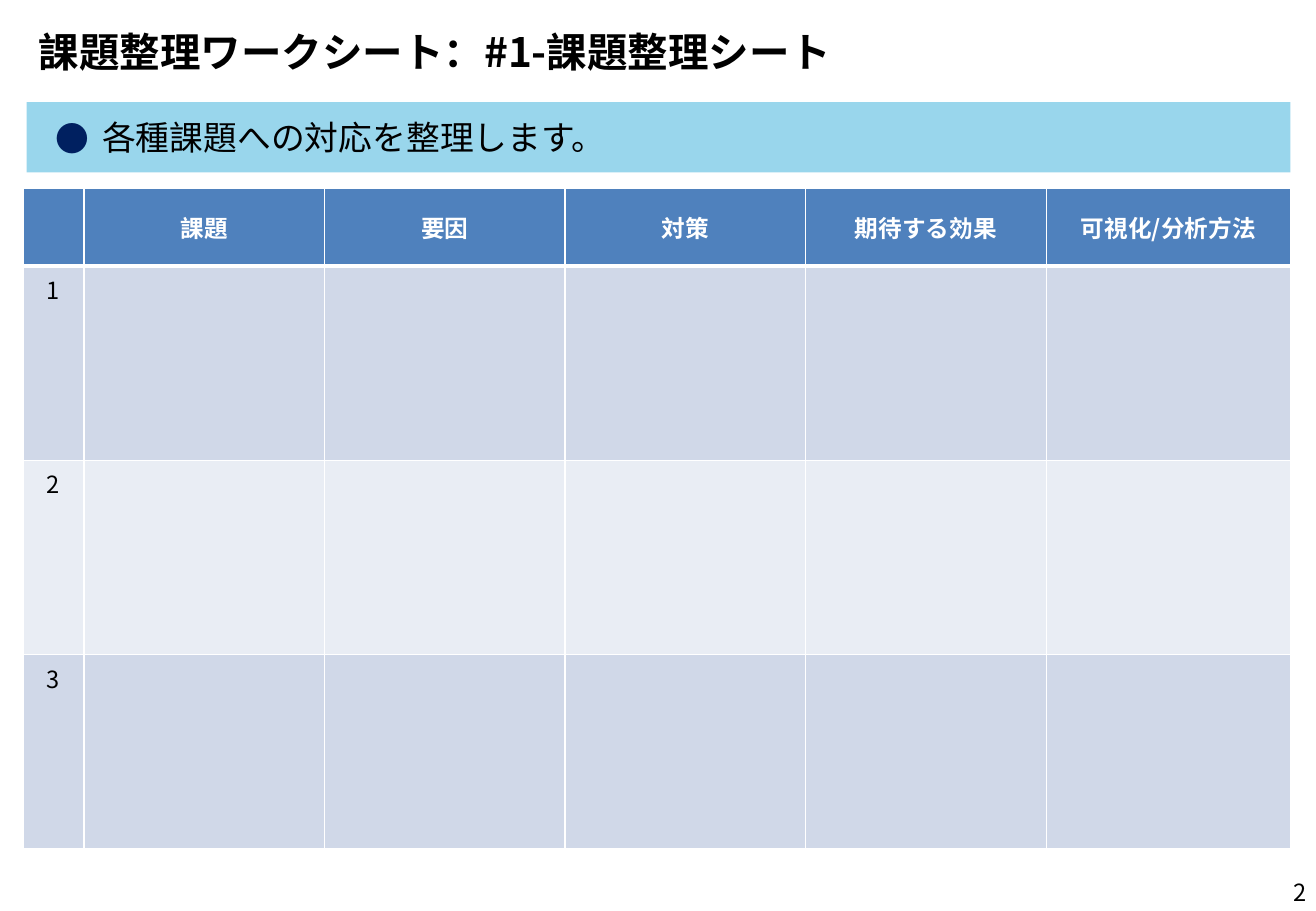
import dataclasses

import pptx
import pptx.dml.color
import pptx.enum.shapes
import pptx.enum.text
import pptx.oxml
import pptx.oxml.ns
import pptx.util

ANCHOR = pptx.enum.text.MSO_ANCHOR
ALIGN = pptx.enum.text.PP_ALIGN
SCALE = 9144


@dataclasses.dataclass(frozen=True)
class Theme:
    font: str = "Noto Sans CJK JP"
    ink: str = "000000"
    paper: str = "FFFFFF"
    banner: str = "99D6EC"
    bullet: str = "002060"
    header: str = "4F81BD"
    bands: tuple = ("D0D8E8", "E9EDF4")
    title_size: int = 24
    banner_size: int = 20
    body_size: int = 14


def px(length):
    return pptx.util.Emu(length * SCALE)


def rgb(code):
    return pptx.dml.color.RGBColor.from_string(code)


class Worksheet:
    """Draws the elements of a worksheet page in one theme."""

    def __init__(self, page, theme):
        self.page = page
        self.theme = theme

    def fill_text(self, frame, text, size, color, bold=False, align=ALIGN.LEFT):
        frame.text = text
        para = frame.paragraphs[0]
        para.alignment = align
        for span in para.runs:
            span.font.name = self.theme.font
            span.font.size = pptx.util.Pt(size)
            span.font.bold = bold
            span.font.color.rgb = rgb(color)
            east_asian = pptx.oxml.parse_xml(
                f'<a:ea {pptx.oxml.ns.nsdecls("a")} typeface="{self.theme.font}"/>')
            span.font._element.find(pptx.oxml.ns.qn("a:latin")).addnext(east_asian)
        return para

    def text(self, place, text, size, bold=False, align=ALIGN.LEFT):
        box = self.page.shapes.add_textbox(*map(px, place))
        box.text_frame.word_wrap = True
        box.text_frame.vertical_anchor = ANCHOR.MIDDLE
        self.fill_text(box.text_frame, text, size, self.theme.ink, bold, align)

    def banner(self, place, text):
        box = self.page.shapes.add_shape(
            pptx.enum.shapes.MSO_SHAPE.RECTANGLE, *map(px, place))
        box.shadow.inherit = False
        box.fill.solid()
        box.fill.fore_color.rgb = rgb(self.theme.banner)
        box.line.fill.background()
        frame = box.text_frame
        frame.word_wrap = True
        frame.vertical_anchor = ANCHOR.MIDDLE
        frame.margin_left = frame.margin_right = px(24)
        para = self.fill_text(frame, text, self.theme.banner_size, self.theme.ink)
        properties = para._p.get_or_add_pPr()
        properties.set("marL", str(px(38)))
        properties.set("indent", str(-px(38)))
        names = pptx.oxml.ns.nsdecls("a")
        for bullet in (f'<a:buClr {names}><a:srgbClr val="{self.theme.bullet}"/></a:buClr>',
                       f'<a:buFont {names} typeface="{self.theme.font}"/>',
                       f'<a:buChar {names} char="●"/>'):
            properties.append(pptx.oxml.parse_xml(bullet))

    def borders(self, cell, bottom):
        properties = cell._tc.get_or_add_tcPr()
        widths = {"lnL": 1, "lnR": 1, "lnT": 1, "lnB": bottom}
        for index, (side, width) in enumerate(widths.items()):
            properties.insert(index, pptx.oxml.parse_xml(
                f'<a:{side} {pptx.oxml.ns.nsdecls("a")} w="{pptx.util.Pt(width)}">'
                f'<a:solidFill><a:srgbClr val="{self.theme.paper}"/></a:solidFill></a:{side}>'))

    def table(self, left, top, widths, heights, rows):
        theme = self.theme
        grid = self.page.shapes.add_table(
            len(rows), len(widths), px(left), px(top), px(sum(widths)), px(sum(heights))).table
        for column, width in zip(grid.columns, widths):
            column.width = px(width)
        for index, (row, height, texts) in enumerate(zip(grid.rows, heights, rows)):
            row.height = px(height)
            heading = index == 0
            fill = theme.header if heading else theme.bands[(index - 1) % 2]
            color = theme.paper if heading else theme.ink
            for cell, text in zip(row.cells, texts):
                cell.fill.solid()
                cell.fill.fore_color.rgb = rgb(fill)
                cell.vertical_anchor = ANCHOR.MIDDLE if heading else ANCHOR.TOP
                self.borders(cell, 3 if heading else 1)
                self.fill_text(cell.text_frame, text, theme.body_size, color, heading, ALIGN.CENTER)


def main():
    deck = pptx.Presentation()
    deck.slide_width, deck.slide_height = px(1083), px(750)
    theme = Theme()
    sheet = Worksheet(deck.slides.add_slide(deck.slide_layouts[6]), theme)
    sheet.text((832, 714, 253, 40), "2", theme.body_size, align=ALIGN.RIGHT)
    sheet.text((22, 17, 1040, 50), "課題整理ワークシート：#1-課題整理シート",
               theme.title_size, bold=True)
    sheet.banner((22, 84, 1040, 58), "各種課題への対応を整理します。")
    headings = ["", "課題", "要因", "対策", "期待する効果", "可視化/分析方法"]
    blanks = [""] * (len(headings) - 1)
    rows = [headings] + [[str(number)] + blanks for number in range(1, 4)]
    sheet.table(19, 155, [50] + [198] * 4 + [201], [64] + [160] * 3, rows)
    deck.save("out.pptx")


if __name__ == "__main__":
    main()
